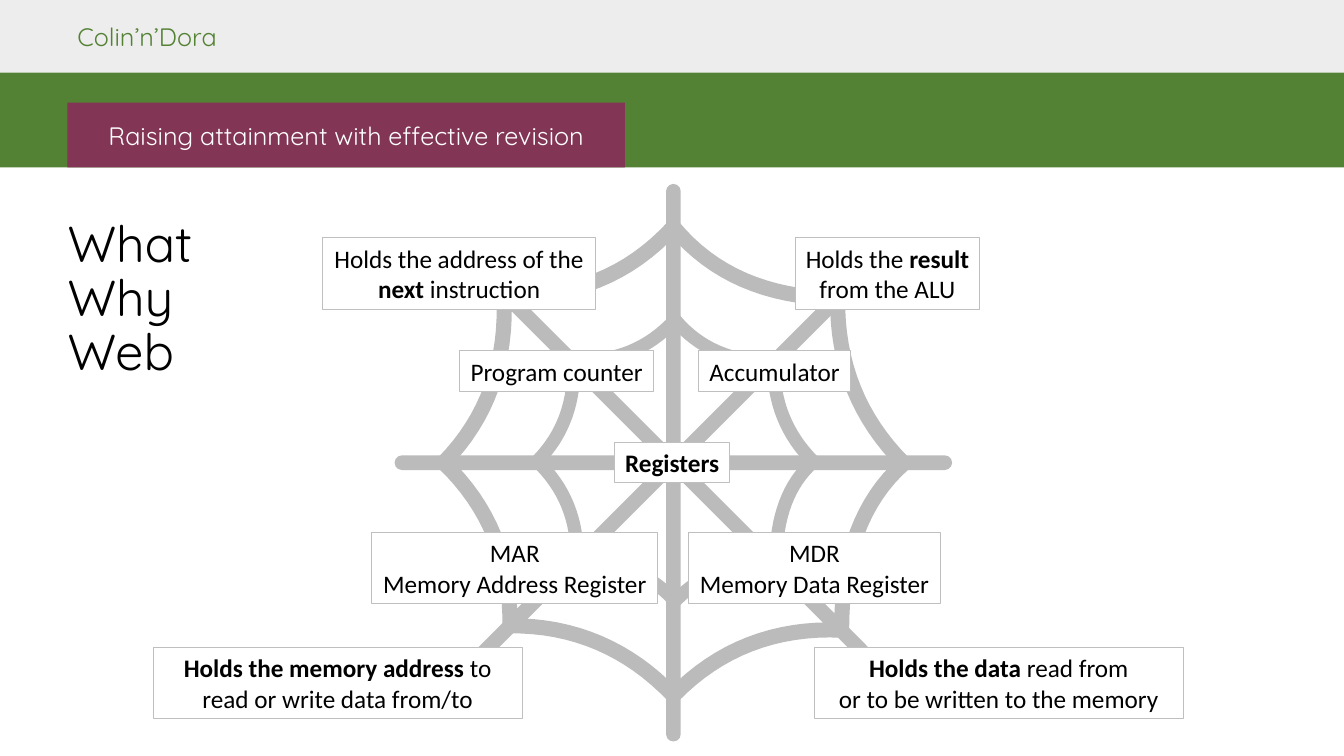
from dataclasses import dataclass

from pptx import Presentation
from pptx.dml.color import RGBColor
from pptx.enum.shapes import MSO_SHAPE
from pptx.enum.text import MSO_ANCHOR, MSO_AUTO_SIZE, PP_ALIGN
from pptx.util import Cm, Pt

RECT = MSO_SHAPE.RECTANGLE
ROUNDED = MSO_SHAPE.ROUNDED_RECTANGLE
TOP, MIDDLE = MSO_ANCHOR.TOP, MSO_ANCHOR.MIDDLE
FIT, NO_FIT = MSO_AUTO_SIZE.SHAPE_TO_FIT_TEXT, MSO_AUTO_SIZE.NONE
LEFT, CENTER = PP_ALIGN.LEFT, PP_ALIGN.CENTER

HEADING, BODY = "Quicksand", "Calibri"
WHITE, BLACK, GREEN, PLUM = "FFFFFF", "000000", "548235", "823554"
PALE, WEB, BORDER = "EDEDED", "BBBBBB", "BFBFBF"

# Web geometry in centimetres
HUB = (16.97, 11.66)
SPOKE_LENGTH, SPOKE_WIDTH = 14.05, 0.37
RING_CENTER = (16.98, 11.62)
CURVE_STEPS = 16
# Each corner of the web is followed by the control point of the next thread
THREADS = [
    ((16.97, 17.53), (15.27, 15.75)),
    ((12.85, 15.77), (12.9, 13.31)),
    ((11.18, 11.66), (12.83, 9.98)),
    ((12.7, 7.42), (15.27, 7.57)),
    ((16.97, 5.72), (18.44, 7.49)),
    ((21.11, 7.52), (21.08, 9.98)),
    ((22.78, 11.68), (21.21, 13.06)),
    ((21.21, 15.88), (18.69, 15.77)),
]


@dataclass
class Ring:
    center: tuple[float, float]
    scale: float
    width: float


@dataclass
class Label:
    """A framed text; asterisks enclose the bold words."""
    left: float
    top: float
    width: float
    lines: list[str]
    wrap: bool = False


RINGS = [Ring(RING_CENTER, 1, 10.8), Ring((17.02, 11.6), 0.6, 9.4)]

LABELS = [
    Label(15.49, 11.15, 2.9, ["*Registers*"]),
    Label(11.58, 8.84, 4.9, ["Program counter"]),
    Label(17.6, 8.84, 3.84, ["Accumulator"]),
    Label(9.37, 13.41, 7.21, ["MAR", "Memory Address Register"]),
    Label(17.35, 13.41, 6.35, ["MDR", "Memory Data Register"]),
    Label(8.13, 5.99, 6.88, ["Holds the address of the", "*next* instruction"]),
    Label(20.04, 5.99, 4.65, ["Holds the *result*", "from the ALU"]),
    Label(3.86, 16.31, 9.3,
          ["*Holds the memory address* to", "read or write data from/to"], True),
    Label(20.52, 16.31, 9.3,
          ["*Holds the data* read from", "or to be written to the memory"], True),
]


def rgb(color: str) -> RGBColor:
    return RGBColor.from_string(color)


def set_font(p, name: str, size: float, color: str) -> None:
    p.font.name = name
    p.font.size = Pt(size)
    p.font.color.rgb = rgb(color)


def add_block(slide, left: float, top: float, width: float, height: float,
              fill: str, kind=RECT):
    sp = slide.shapes.add_shape(kind, Cm(left), Cm(top), Cm(width), Cm(height))
    sp.shadow.inherit = False
    sp.fill.solid()
    sp.fill.fore_color.rgb = rgb(fill)
    sp.line.fill.background()
    return sp


def add_spoke(slide, angle: float) -> None:
    x, y = HUB
    sp = add_block(slide, x - SPOKE_LENGTH / 2, y - SPOKE_WIDTH / 2,
                   SPOKE_LENGTH, SPOKE_WIDTH, WEB, ROUNDED)
    sp.adjustments[0] = 0.5
    sp.rotation = angle


def ring_points(ring: Ring) -> list[tuple[int, int]]:
    def place(value: float, axis: int) -> int:
        offset = (value - RING_CENTER[axis]) * ring.scale
        return Cm(ring.center[axis] + offset)

    points = []
    for i, (start, control) in enumerate(THREADS):
        end = THREADS[(i + 1) % len(THREADS)][0]
        for step in range(CURVE_STEPS):
            t = step / CURVE_STEPS
            x, y = ((1 - t) ** 2 * a + 2 * t * (1 - t) * b + t ** 2 * c
                    for a, b, c in zip(start, control, end))
            points.append((place(x, 0), place(y, 1)))
    return points


def add_ring(slide, ring: Ring) -> None:
    first, *rest = ring_points(ring)
    builder = slide.shapes.build_freeform(*first)
    builder.add_line_segments(rest, close=True)
    sp = builder.convert_to_shape()
    sp.shadow.inherit = False
    sp.fill.background()
    sp.line.color.rgb = rgb(WEB)
    sp.line.width = Pt(ring.width)


def add_label(slide, label: Label) -> None:
    height = 1.02 if len(label.lines) == 1 else 1.8
    sp = add_block(slide, label.left, label.top, label.width, height, WHITE)
    sp.line.color.rgb = rgb(BORDER)
    sp.line.width = Pt(0.75)
    tf = sp.text_frame
    tf.word_wrap = label.wrap
    tf.auto_size = FIT
    for i, line in enumerate(label.lines):
        p = tf.add_paragraph() if i else tf.paragraphs[0]
        p.alignment = CENTER
        set_font(p, BODY, 18, BLACK)
        for j, text in enumerate(line.split("*")):
            if text:
                r = p.add_run()
                r.text = text
                r.font.bold = j % 2 == 1


def main() -> None:
    prs = Presentation()
    prs.slide_width, prs.slide_height = Cm(33.87), Cm(19.05)
    slide = prs.slides.add_slide(prs.slide_layouts[5])

    # Header bands and site name
    add_block(slide, 0, 0, 33.87, 1.83, PALE)
    add_block(slide, 0, 1.83, 33.87, 2.39, GREEN)
    sp = slide.shapes.add_textbox(Cm(1.7), Cm(0.41), Cm(4.75), Cm(1.02))
    tf = sp.text_frame
    tf.word_wrap = False
    p = tf.paragraphs[0]
    p.text = "Colin’n’Dora"
    set_font(p, HEADING, 18, GREEN)

    # Spider web
    for angle in (90, 135, 0, 45):
        add_spoke(slide, angle)
    for ring in RINGS:
        add_ring(slide, ring)
    for label in LABELS:
        add_label(slide, label)

    # Title
    title = slide.shapes.title
    title.left, title.top = Cm(1.45), Cm(5.38)
    title.width, title.height = Cm(5.28), Cm(4.98)
    tf = title.text_frame
    tf.auto_size = NO_FIT
    tf.vertical_anchor = TOP
    p = tf.paragraphs[0]
    p.text = "What\vWhy\vWeb"
    p.alignment = LEFT
    p.line_spacing = 0.9
    set_font(p, HEADING, 36, BLACK)

    # Subject banner
    sp = add_block(slide, 1.7, 2.59, 14.05, 1.63, PLUM)
    tf = sp.text_frame
    tf.word_wrap = True
    tf.vertical_anchor = MIDDLE
    p = tf.paragraphs[0]
    p.text = "Raising attainment with effective revision"
    p.alignment = CENTER
    set_font(p, HEADING, 18, WHITE)

    prs.save("out.pptx")


if __name__ == "__main__":
    main()
